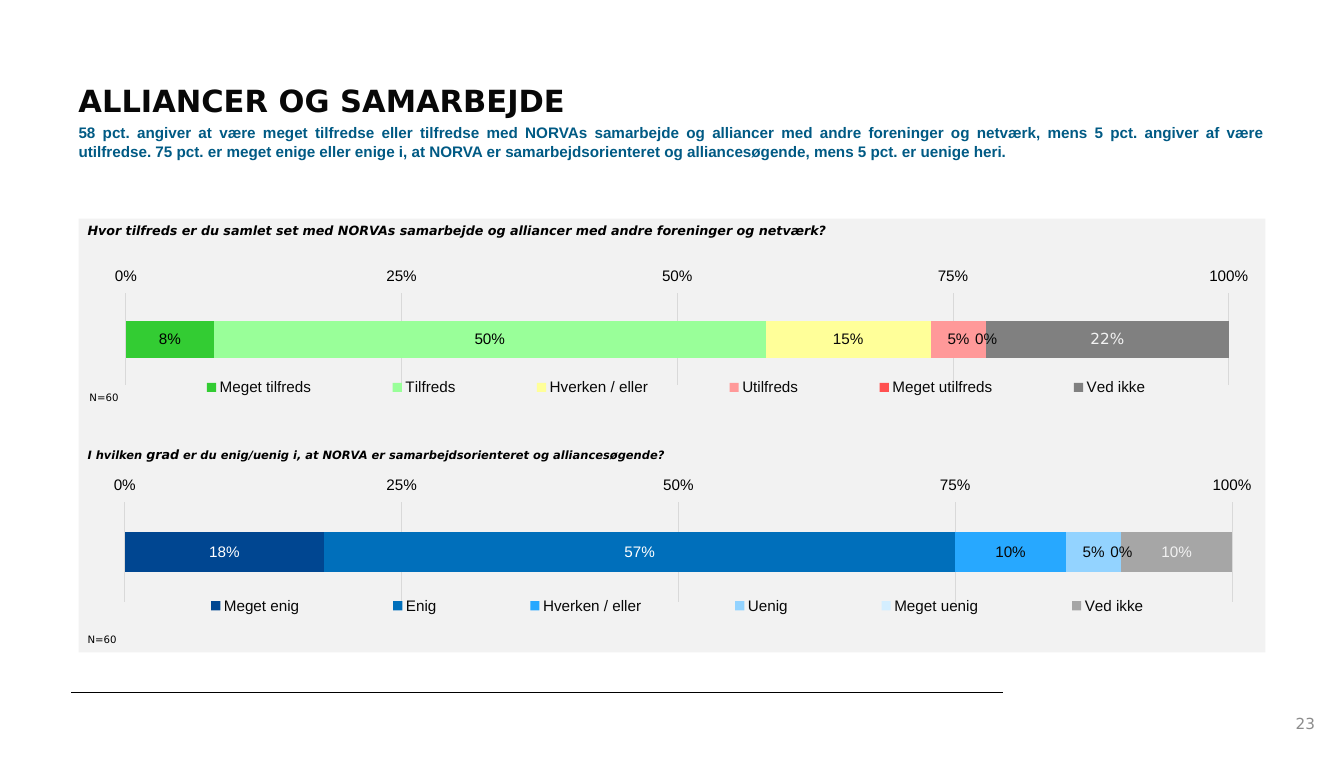
from lxml import etree
from pptx import Presentation
from pptx.chart.data import CategoryChartData
from pptx.dml.color import RGBColor
from pptx.enum import chart as ch, shapes, text
from pptx.oxml import parse_xml
from pptx.oxml.ns import nsdecls, qn
from pptx.util import Pt

SANS, ARIAL = "DejaVu Sans", "Arial"
BLACK, INK, PALE, WHITE = "000000", "080808", "F2F2F2", "FFFFFF"


def color(code):
    return RGBColor.from_string(code)


def put(obj, **vals):
    for key, val in vals.items():
        setattr(obj, key, val)


def style(font, size, code=BLACK, name=SANS, **more):
    put(font, size=Pt(size), name=name, **more)
    font.color.rgb = color(code)


def write(slide, box, runs, inset=(7.2, 3.6), lead=None, align=None,
          anchor=text.MSO_ANCHOR.TOP):
    """Add a text box; each run is (words, size, colour, font, more)."""
    frame = slide.shapes.add_textbox(*map(Pt, box)).text_frame
    side, top = map(Pt, inset)
    put(frame, word_wrap=True, vertical_anchor=anchor, margin_left=side,
        margin_right=side, margin_top=top, margin_bottom=top)
    para = frame.paragraphs[0]
    put(para, alignment=align, line_spacing=Pt(lead) if lead else None)
    for words, size, code, name, more in runs:
        run = para.add_run()
        run.text = words
        style(run.font, size, code, name, **more)


def place(node, index, area, inner=False):
    """Give a plot area or legend a manual layout in shares of the chart."""
    for old in node.findall(qn("c:layout")):
        node.remove(old)
    parts = '<c:layoutTarget val="inner"/>' if inner else ""
    parts += '<c:xMode val="edge"/><c:yMode val="edge"/>'
    parts += "".join(f'<c:{k} val="{v}"/>' for k, v in zip("xywh", area))
    node.insert(index, parse_xml(
        f'<c:layout {nsdecls("c")}><c:manualLayout>{parts}</c:manualLayout></c:layout>'))


def draw_bar(slide, box, rows, plot_area, key_area):
    """Add a single stacked bar; each row is (name, value, fill, label colour, label font)."""
    data = CategoryChartData(number_format="0%")
    data.categories = ["1"]
    for name, value, *_ in rows:
        data.add_series(name, [value])
    chart = slide.shapes.add_chart(
        ch.XL_CHART_TYPE.BAR_STACKED_100, *map(Pt, box), data).chart
    style(chart.font, 18)
    put(chart, has_title=False, has_legend=True)
    put(chart.legend, position=ch.XL_LEGEND_POSITION.BOTTOM, include_in_layout=False)
    style(chart.legend.font, 12, INK, ARIAL)
    put(chart.category_axis, reverse_order=True, visible=False)

    axis = chart.value_axis
    put(axis, minimum_scale=0, maximum_scale=1, major_unit=0.25,
        has_major_gridlines=True, major_tick_mark=ch.XL_TICK_MARK.OUTSIDE)
    put(axis.tick_labels, number_format="0%", number_format_is_linked=False)
    style(axis.tick_labels.font, 12, BLACK, ARIAL)
    axis.format.line.fill.background()
    grid = axis.major_gridlines.format.line
    grid.width = Pt(0.75)
    grid.color.rgb = color("D9D9D9")

    plot = chart.plots[0]
    put(plot, gap_width=150, overlap=100, vary_by_categories=False)
    for part, (_, _, fill, ink, face) in zip(plot.series, rows):
        part.format.fill.solid()
        part.format.fill.fore_color.rgb = color(fill)
        put(part.data_labels, show_value=True, number_format="0%",
            number_format_is_linked=False)
        style(part.data_labels.font, 12, ink, face)

    root = chart.element.find(qn("c:chart"))
    place(root.find(qn("c:plotArea")), 0, plot_area, inner=True)
    place(root.find(qn("c:legend")), 1, key_area)
    root.addnext(parse_xml(
        f'<c:spPr {nsdecls("c", "a")}><a:noFill/><a:ln><a:noFill/></a:ln></c:spPr>'))


def draw_head(slide, left, top, width):
    write(slide, (left, top, width - 42, 37.5),
          [("ALLIANCER OG SAMARBEJDE", 24, INK, SANS, {"bold": True})],
          (0, 0), 40, anchor=text.MSO_ANCHOR.MIDDLE)
    lead = ("58 pct. angiver at være meget tilfredse eller tilfredse med NORVAs "
            "samarbejde og alliancer med andre foreninger og netværk, mens 5 pct. "
            "angiver af være utilfredse. 75 pct. er meget enige eller enige i, at "
            "NORVA er samarbejdsorienteret og alliancesøgende, mens 5 pct. er uenige heri.")
    write(slide, (left, top + 42.5, width, 75),
          [(lead, 12, "005A84", ARIAL, {"bold": True})],
          (0, 0), 14.5, text.PP_ALIGN.JUSTIFY)


def draw_panel(slide, left, top, width, height):
    panel = slide.shapes.add_shape(
        shapes.MSO_SHAPE.RECTANGLE, *map(Pt, (left, top, width, height)))
    panel.shadow.inherit = False
    panel.fill.solid()
    panel.fill.fore_color.rgb = color(PALE)
    panel.line.fill.background()

    slant = {"bold": True, "italic": True}
    ask = [("Hvor tilfreds er du samlet set med NORVAs samarbejde og alliancer "
            "med andre foreninger og netværk?", 10)]
    agree = [("I hvilken ", 9), ("grad", 10),
             (" er du enig/uenig i, at NORVA er samarbejdsorienteret og "
              "alliancesøgende?", 9)]
    for runs, down in ((ask, 0), (agree, 176)):
        write(slide, (left, top + down, width, 19.5),
              [(words, size, BLACK, SANS, slant) for words, size in runs])
    for right, down in ((1.5, 132.5), (0, 322.5)):
        write(slide, (left + right, top + down, 54, 17),
              [("N=60", 8, BLACK, SANS, {})])

    draw_bar(slide, (left + 7.6, top + 23.8, 926.4, 126), [
        ("Meget tilfreds", 0.08, "33CC33", BLACK, ARIAL),
        ("Tilfreds", 0.5, "99FF99", BLACK, ARIAL),
        ("Hverken / eller", 0.15, "FFFF99", INK, ARIAL),
        ("Utilfreds", 0.05, "FF9999", INK, ARIAL),
        ("Meget utilfreds", 0, "FF5050", INK, ARIAL),
        ("Ved ikke", 0.22, "808080", PALE, SANS),
    ], (0.032, 0.277, 0.937, 0.576), (0.036, 0.78, 0.927, 0.17))
    draw_bar(slide, (left, top + 199.5, width, 118.8), [
        ("Meget enig", 0.18, "004691", WHITE, ARIAL),
        ("Enig", 0.57, "006FBB", WHITE, ARIAL),
        ("Hverken / eller", 0.1, "27A8FF", INK, ARIAL),
        ("Uenig", 0.05, "93D3FF", INK, ARIAL),
        ("Meget uenig", 0, "D4EEFF", INK, ARIAL),
        ("Ved ikke", 0.1, "A6A6A6", PALE, ARIAL),
    ], (0.039, 0.198, 0.933, 0.66), (0.037, 0.8, 0.935, 0.17))


def draw_foot(slide, left, top):
    rule = slide.shapes.add_connector(
        shapes.MSO_CONNECTOR.STRAIGHT, *map(Pt, (left, top, left + 733.7, top)))
    rule.line.width = Pt(1)
    rule.line.color.rgb = color(BLACK)
    etree.SubElement(rule.element.spPr, qn("a:effectLst"))
    write(slide, (left + 739, top + 8.6, 247, 31.7),
          [("23", 12, "8C8C8C", SANS, {})],
          align=text.PP_ALIGN.RIGHT, anchor=text.MSO_ANCHOR.MIDDLE)


def main():
    deck = Presentation()
    put(deck, slide_width=Pt(1057.7), slide_height=Pt(595.4))
    slide = deck.slides.add_slide(deck.slide_layouts[6])
    draw_foot(slide, 56, 544.4)
    draw_head(slide, 61.8, 54.7, 934)
    draw_panel(slide, 61.8, 171.9, 934, 341.3)
    deck.save("out.pptx")


if __name__ == "__main__":
    main()
